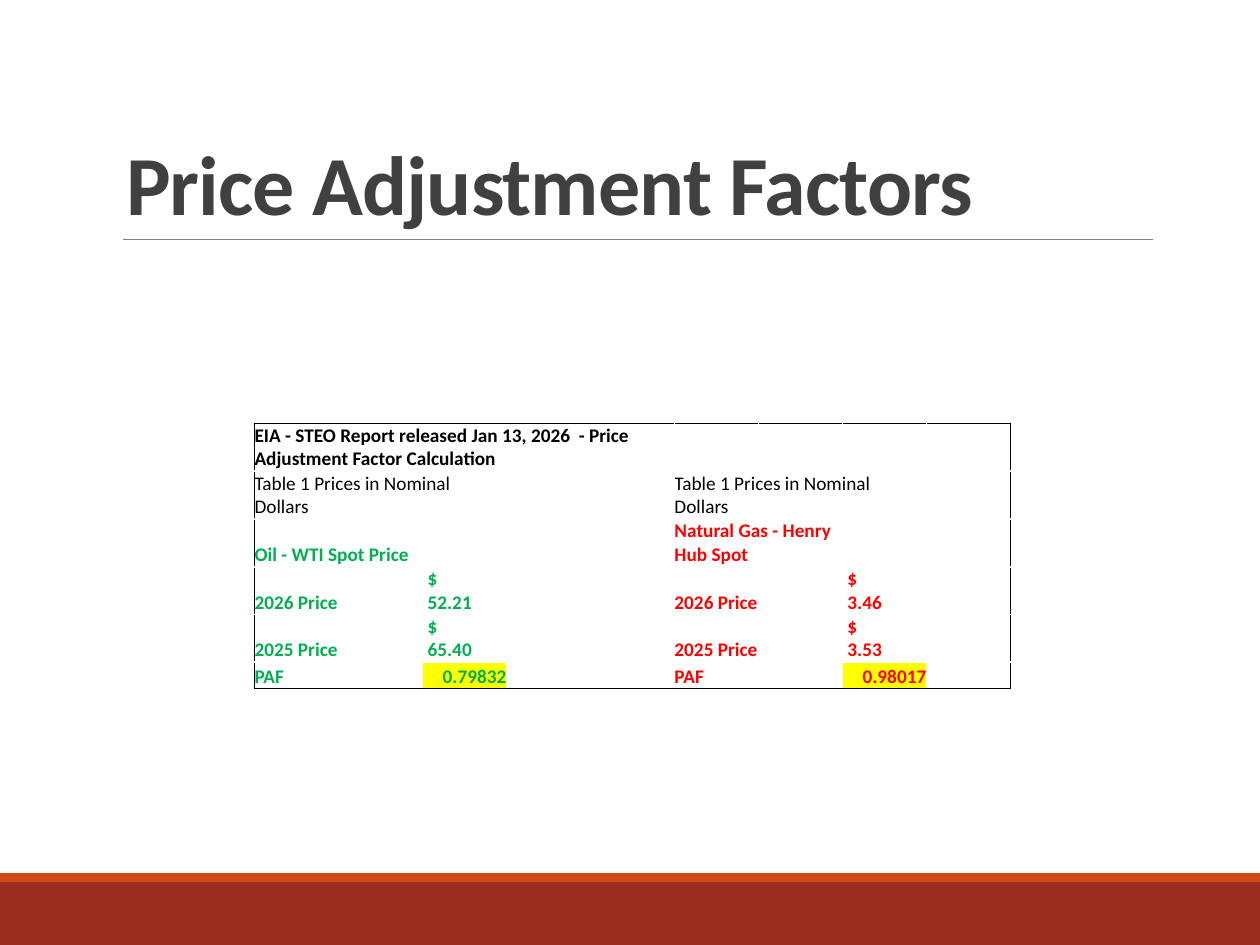
from itertools import product
from lxml.etree import SubElement
from pptx import Presentation
from pptx.dml.color import RGBColor
from pptx.enum.shapes import MSO_CONNECTOR, MSO_SHAPE
from pptx.enum.text import MSO_ANCHOR, MSO_AUTO_SIZE, PP_ALIGN
from pptx.oxml.ns import qn
from pptx.util import Inches, Pt

WIDE, HIGH = Inches(10), Inches(7.5)
FONT = "Calibri"
BLACK, GREEN, RED = "000000", "00B050", "FF0000"
COLS = 9
ROWS = [0.38, 0.38, 0.38, 0.2, 0.2, 0.21]
HEAD = "EIA - STEO Report released Jan 13, 2026  - Price Adjustment Factor Calculation"
NOTE = "Table 1 Prices in Nominal Dollars"
FUELS = [
    (0, GREEN, "Oil - WTI Spot Price", "52.21", "65.40", "0.79832"),
    (5, RED, "Natural Gas - Henry Hub Spot", "3.46", "3.53", "0.98017"),
]


def paint(form, tone):
    """Set a fill or font colour from a hex string."""
    if hasattr(form, "solid"):
        form.solid()
        form = form.fore_color
    else:
        form = form.color
    form.rgb = RGBColor.from_string(tone)


def style(par, size, tone, bold=True):
    """Set the font of a paragraph."""
    par.font.name, par.font.size, par.font.bold = FONT, Pt(size), bold
    paint(par.font, tone)


def add_foot(slide, left, top, width, height):
    """Draw the foot band with its thin upper strip."""
    strip = Inches(0.07)
    for y, tall, tone in [(top + strip, height - strip, "9B2D1F"), (top, strip, "D34817")]:
        bar = slide.shapes.add_shape(MSO_SHAPE.RECTANGLE, left, y, width, tall)
        bar.shadow.inherit = False
        paint(bar.fill, tone)
        bar.line.fill.background()


def add_title(slide, left, top, width, height):
    """Place the title and the rule below it."""
    title = slide.shapes.title
    title.left, title.top, title.width, title.height = left, top, width, height
    frame = title.text_frame
    frame.text = "Price Adjustment Factors"
    frame.auto_size = MSO_AUTO_SIZE.NONE
    frame.word_wrap = True
    frame.vertical_anchor = MSO_ANCHOR.BOTTOM
    par = frame.paragraphs[0]
    par.alignment, par.line_spacing = PP_ALIGN.LEFT, 0.85
    style(par, 48, "404040")
    par.runs[0].font._element.set("spc", "-50")
    base = top + height
    rule = slide.shapes.add_connector(
        MSO_CONNECTOR.STRAIGHT, left + Inches(0.08), base, left + width, base)
    paint(rule.line.fill, "808080")
    rule.line.width = Pt(0.5)
    SubElement(rule._element.spPr, qn("a:effectLst"))


def add_edge(cell, side):
    """Draw one black border of a cell."""
    line = SubElement(cell._tc.get_or_add_tcPr(), qn(f"a:ln{side}"), w=str(Pt(1)))
    fill = SubElement(line, qn("a:solidFill"))
    SubElement(fill, qn("a:srgbClr"), val=BLACK)


def set_tab(par):
    """Align an amount at a right tab after its currency sign."""
    props = par._p.get_or_add_pPr()
    props.set("marL", str(Inches(0.04)))
    props.set("indent", "0")
    tabs = SubElement(props, qn("a:tabLst"))
    SubElement(tabs, qn("a:tab"), pos=str(Inches(0.56)), algn="r")


def write(grid, row, col, text, tone, span=1, bold=True):
    """Write a cell that spans some columns."""
    cell = grid.cell(row, col)
    if span > 1:
        cell.merge(grid.cell(row, col + span - 1))
    par = cell.text_frame.paragraphs[0]
    par.text = text
    if "\t" in text:
        set_tab(par)
    style(par, 11, tone, bold)


def add_fuel(grid, col, tone, name, new, old, factor):
    """Fill the price block of one fuel."""
    write(grid, 1, col, NOTE, BLACK, 3, False)
    write(grid, 2, col, name, tone, 2)
    pairs = [("2026 Price", f"$\t{new}"), ("2025 Price", f"$\t{old}"), ("PAF", factor)]
    for row, (label, value) in enumerate(pairs, 3):
        write(grid, row, col, label, tone)
        write(grid, row, col + 2, value, tone)
    cell = grid.cell(len(ROWS) - 1, col + 2)
    cell.text_frame.paragraphs[0].alignment = PP_ALIGN.RIGHT
    paint(cell.fill, "FFFF00")


def add_prices(slide, left, top, width, height):
    """Build the framed table of prices and factors."""
    grid = slide.shapes.add_table(len(ROWS), COLS, left, top, width, height).table
    grid.first_row = grid.horz_banding = False
    for col in grid.columns:
        col.width = width // COLS
    for row, tall in zip(grid.rows, ROWS):
        row.height = Inches(tall)
    for row, col in product(range(len(ROWS)), range(COLS)):
        cell = grid.cell(row, col)
        cell.margin_left = cell.margin_right = cell.margin_top = cell.margin_bottom = 0
        cell.vertical_anchor = MSO_ANCHOR.BOTTOM
        edges = {"L": col == 0, "R": col == COLS - 1,
                 "T": row == 0, "B": row == len(ROWS) - 1}
        for side, outer in edges.items():
            if outer:
                add_edge(cell, side)
        paint(cell.fill, "FFFFFF")
        SubElement(cell.text_frame.paragraphs[0]._p, qn("a:endParaRPr"), sz="1100")
    write(grid, 0, 0, HEAD, BLACK, 5)
    for fuel in FUELS:
        add_fuel(grid, *fuel)


def main():
    """Build and save the slide."""
    deck = Presentation()
    deck.slide_width, deck.slide_height = WIDE, HIGH
    slide = deck.slides.add_slide(deck.slide_layouts[5])
    add_foot(slide, 0, Inches(6.93), WIDE, HIGH - Inches(6.93))
    add_title(slide, Inches(0.9), Inches(0.31), Inches(8.25), Inches(1.59))
    add_prices(slide, Inches(2.02), Inches(3.36), Inches(6), Inches(sum(ROWS)))
    deck.save("out.pptx")


if __name__ == "__main__":
    main()
